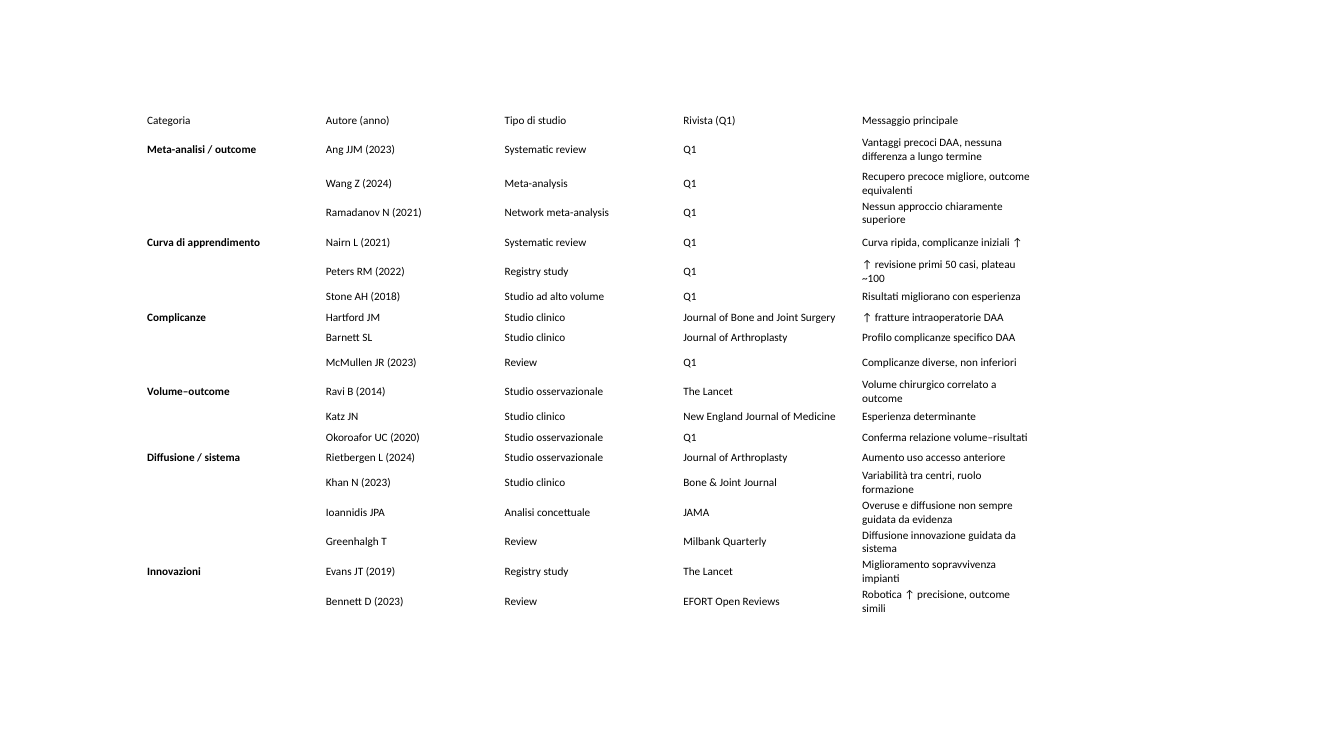
from dataclasses import dataclass

from lxml import etree
from pptx import Presentation
from pptx import util as u
from pptx.dml.color import RGBColor
from pptx.enum import text
from pptx.oxml.ns import qn

PX = 3048  # EMU per px, 300 px to the inch


@dataclass(frozen=True)
class Theme:
    font: str = "Calibri"
    ink: RGBColor = RGBColor(0, 0, 0)
    size: int = 8


THEME = Theme()
SHORT, MEDIUM, TALL = 61, 87, 114

# Row height, then the cells; an empty category continues the one above.
STUDIES = [
    (SHORT, "Categoria", "Autore (anno)", "Tipo di studio", "Rivista (Q1)", "Messaggio principale"),
    (TALL, "Meta-analisi / outcome", "Ang JJM (2023)", "Systematic review", "Q1",
     "Vantaggi precoci DAA, nessuna differenza a lungo termine"),
    (MEDIUM, "", "Wang Z (2024)", "Meta-analysis", "Q1",
     "Recupero precoce migliore, outcome equivalenti"),
    (MEDIUM, "", "Ramadanov N (2021)", "Network meta-analysis", "Q1",
     "Nessun approccio chiaramente superiore"),
    (MEDIUM, "Curva di apprendimento", "Nairn L (2021)", "Systematic review", "Q1",
     "Curva ripida, complicanze iniziali ↑"),
    (MEDIUM, "", "Peters RM (2022)", "Registry study", "Q1",
     "↑ revisione primi 50 casi, plateau ~100"),
    (SHORT, "", "Stone AH (2018)", "Studio ad alto volume", "Q1",
     "Risultati migliorano con esperienza"),
    (SHORT, "Complicanze", "Hartford JM", "Studio clinico", "Journal of Bone and Joint Surgery",
     "↑ fratture intraoperatorie DAA"),
    (SHORT, "", "Barnett SL", "Studio clinico", "Journal of Arthroplasty",
     "Profilo complicanze specifico DAA"),
    (MEDIUM, "", "McMullen JR (2023)", "Review", "Q1", "Complicanze diverse, non inferiori"),
    (SHORT, "Volume–outcome", "Ravi B (2014)", "Studio osservazionale", "The Lancet",
     "Volume chirurgico correlato a outcome"),
    (SHORT, "", "Katz JN", "Studio clinico", "New England Journal of Medicine",
     "Esperienza determinante"),
    (SHORT, "", "Okoroafor UC (2020)", "Studio osservazionale", "Q1",
     "Conferma relazione volume–risultati"),
    (SHORT, "Diffusione / sistema", "Rietbergen L (2024)", "Studio osservazionale",
     "Journal of Arthroplasty", "Aumento uso accesso anteriore"),
    (SHORT, "", "Khan N (2023)", "Studio clinico", "Bone & Joint Journal",
     "Variabilità tra centri, ruolo formazione"),
    (MEDIUM, "", "Ioannidis JPA", "Analisi concettuale", "JAMA",
     "Overuse e diffusione non sempre guidata da evidenza"),
    (MEDIUM, "", "Greenhalgh T", "Review", "Milbank Quarterly",
     "Diffusione innovazione guidata da sistema"),
    (MEDIUM, "Innovazioni", "Evans JT (2019)", "Registry study", "The Lancet",
     "Miglioramento sopravvivenza impianti"),
    (MEDIUM, "", "Bennett D (2023)", "Review", "EFORT Open Reviews",
     "Robotica ↑ precisione, outcome simili"),
]


def px(n):
    return u.Emu(n * PX)


def write(tf, content, size=THEME.size, color=THEME.ink, bold=False):
    """Fill the first paragraph; an empty one still gets its type size."""
    p = tf.paragraphs[0]
    if not content:
        etree.SubElement(p._p, qn("a:endParaRPr"), sz=str(size * 100))
        return
    r = p.add_run()
    r.text = content
    r.font.name = THEME.font
    r.font.size = u.Pt(size)
    r.font.bold = bold
    r.font.color.rgb = color


def format_cell(cell):
    cell.fill.background()
    cell.vertical_anchor = text.MSO_ANCHOR.MIDDLE
    cell.margin_left = cell.margin_right = px(9)
    cell.margin_top = cell.margin_bottom = px(3)


def add_studies_table(slide, left, top, width, height):
    cols = len(STUDIES[0]) - 1
    frame = slide.shapes.add_table(len(STUDIES), cols, px(left), px(top), px(width), px(height))
    table = frame.table
    table.first_row = table.horz_banding = False
    for col in table.columns:
        col.width = px(width // cols)
    for i, (row_height, *values) in enumerate(STUDIES):
        table.rows[i].height = px(row_height)
        for j, value in enumerate(values):
            cell = table.cell(i, j)
            format_cell(cell)
            write(cell.text_frame, value, bold=i > 0 and j == 0)
    frame.height = px(height)


def main():
    prs = Presentation()
    prs.slide_width, prs.slide_height = px(4000), px(2250)
    slide = prs.slides.add_slide(prs.slide_layouts[6])
    add_studies_table(slide, 429, 327, 2660, 1512)
    prs.save("out.pptx")


if __name__ == "__main__":
    main()
